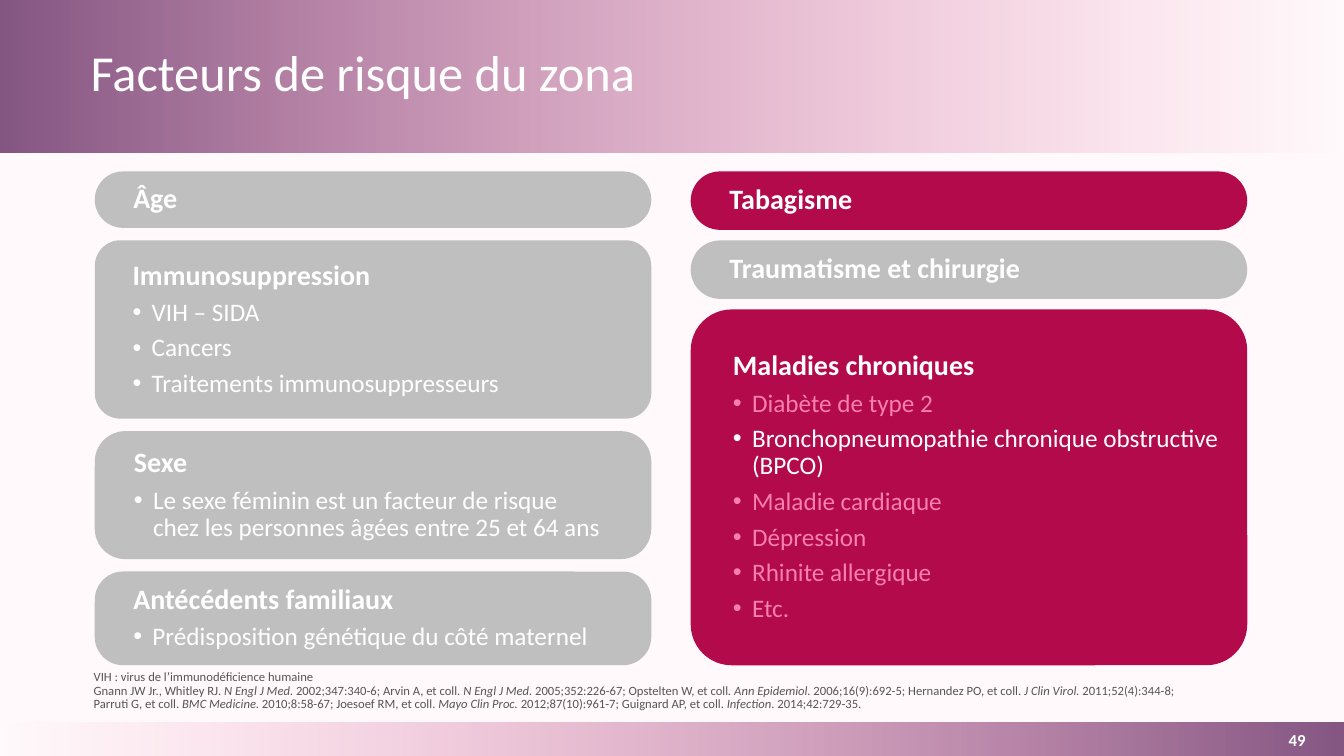
"""Build the slide on risk factors for shingles."""
from dataclasses import dataclass

from lxml import etree
from pptx import Presentation
from pptx import util as u
from pptx.dml.color import RGBColor
from pptx.enum import shapes, text
from pptx.oxml.ns import qn


@dataclass(frozen=True)
class Theme:
    """Colours, font and type sizes of the slide."""
    font: str = "Calibri"
    white: str = "FFFFFF"
    background: str = "FFF9FB"
    purple: str = "855683"
    pink: str = "F87FAE"
    crimson: str = "B20A4B"
    grey: str = "BFBFBF"
    note: str = "555555"
    title_size: int = 36
    heading_size: int = 20
    bullet_size: int = 18
    number_size: int = 12
    note_size: int = 9


@dataclass(frozen=True)
class Box:
    """A rectangle in percent of the slide's width and height."""
    left: float
    top: float
    width: float
    height: float

    def emu(self) -> tuple[int, int, int, int]:
        """Give left, top, width and height in slide units."""
        return (int(WIDTH * self.left / 100), int(HEIGHT * self.top / 100),
                int(WIDTH * self.width / 100), int(HEIGHT * self.height / 100))


@dataclass(frozen=True)
class Card:
    """A rounded card: height in percent of the slide, heading and bullets."""
    heading: str
    height: float
    corner: float = 0.5
    bullets: tuple[str, ...] = ()
    fill: str = Theme.grey
    faded: tuple[str, ...] = ()


THEME = Theme()
WIDTH, HEIGHT = u.Inches(13.33), u.Inches(7.5)
CARDS_TOP, CARDS_BOTTOM, CARD_WIDTH = 22.67, 88, 41.41
HEADER = Box(0, 0, 100, 20.13)
FOOTER = Box(0, 95.6, 100, 4.4)
TITLE = Box(6, 2.4, 86.05, 15.2)
NOTE = Box(6.23, 85.87, 84.1, 8.93)
NUMBER = Box(93.02, 95.6, 6.98, 4.4)

COLUMNS: dict[float, tuple[Card, ...]] = {
    7.05: (
        Card("Âge", 7.47),
        Card("Immunosuppression", 23.6, 0.144,
             ("VIH – SIDA", "Cancers", "Traitements immunosuppresseurs")),
        Card("Sexe", 16.93, 0.238,
             ("Le sexe féminin est un facteur de risque\n"
              "chez les personnes âgées entre 25 et 64 ans",)),
        Card("Antécédents familiaux", 12.4, 0.303,
             ("Prédisposition génétique du côté maternel",)),
    ),
    51.39: (
        Card("Tabagisme", 7.73, fill=THEME.crimson),
        Card("Traumatisme et chirurgie", 7.73),
        Card("Maladies chroniques", 47.07, 0.115,
             ("Diabète de type 2",
              "Bronchopneumopathie chronique obstructive (BPCO)",
              "Maladie cardiaque", "Dépression", "Rhinite allergique", "Etc."),
             THEME.crimson,
             ("Diabète de type 2", "Maladie cardiaque", "Dépression",
              "Rhinite allergique", "Etc.")),
    ),
}

ABBREVIATION = "VIH : virus de l’immunodéficience humaine"
REFERENCES = (
    "Gnann JW Jr., Whitley RJ. *N Engl J Med. *2002;347:340-6; Arvin A, et coll. "
    "*N Engl J Med. *2005;352:226-67; Opstelten W, et coll*. Ann Epidemiol.* "
    "2006;16(9):692-5; Hernandez PO, et coll. *J Clin Virol. *2011;52(4):344-8; "
    "Parruti G, et coll. *BMC Medicine.* 2010;8:58-67; Joesoef RM, et coll. "
    "*Mayo Clin Proc. *2012;87(10):961-7; Guignard AP, et coll. "
    "*Infection*. 2014;42:729-35."
)


def style(paragraph, size: int, color: str, bold: bool = False, spacing: float = 0.9) -> None:
    """Set the font and line spacing of a paragraph."""
    paragraph.line_spacing = spacing
    font = paragraph.font
    font.name, font.size, font.bold = THEME.font, u.Pt(size), bold
    font.color.rgb = RGBColor.from_string(color)


def add_bullet(paragraph) -> None:
    """Give a paragraph a hanging bullet."""
    properties = paragraph._p.get_or_add_pPr()
    properties.set("marL", str(u.Inches(0.19)))
    properties.set("indent", str(-u.Inches(0.19)))
    etree.SubElement(properties, qn("a:buFont"), typeface="Arial")
    etree.SubElement(properties, qn("a:buChar"), char="•")


def add_band(slide, box: Box, angle: int) -> None:
    """Draw a band fading from purple to clear pink."""
    band = slide.shapes.add_shape(shapes.MSO_SHAPE.RECTANGLE, *box.emu())
    band.shadow.inherit = False
    band.line.fill.background()
    band.fill.gradient()
    band.fill.gradient_angle = angle
    for stop, color in zip(band.fill.gradient_stops, (THEME.purple, THEME.pink)):
        stop.color.rgb = RGBColor.from_string(color)
    last_color = band._element.findall(".//" + qn("a:srgbClr"))[-1]
    etree.SubElement(last_color, qn("a:alpha"), val="0")


def add_card(slide, card: Card, left: float, top: float) -> None:
    """Draw a card with its heading and bullets."""
    shape = slide.shapes.add_shape(shapes.MSO_SHAPE.ROUNDED_RECTANGLE,
                                   *Box(left, top, CARD_WIDTH, card.height).emu())
    shape.adjustments[0] = card.corner
    shape.shadow.inherit = False
    shape.line.fill.background()
    shape.fill.solid()
    shape.fill.fore_color.rgb = RGBColor.from_string(card.fill)
    frame = shape.text_frame
    frame.word_wrap = True
    frame.vertical_anchor = text.MSO_ANCHOR.MIDDLE
    frame.margin_left, frame.margin_right = u.Inches(0.3), u.Inches(0.07)
    frame.margin_top = frame.margin_bottom = 0
    for index, line in enumerate((card.heading, *card.bullets)):
        paragraph = frame.add_paragraph() if index else frame.paragraphs[0]
        paragraph.text = line
        paragraph.alignment = text.PP_ALIGN.LEFT
        paragraph.space_after = u.Pt(6)
        if index:
            add_bullet(paragraph)
        style(paragraph, THEME.bullet_size if index else THEME.heading_size,
              THEME.pink if line in card.faded else THEME.white, bold=not index)


def add_column(slide, left: float, cards: tuple[Card, ...]) -> None:
    """Stack cards with equal gaps over the height of the card area."""
    free = CARDS_BOTTOM - CARDS_TOP - sum(card.height for card in cards)
    gap = free / (len(cards) - 1)
    top = CARDS_TOP
    for card in cards:
        add_card(slide, card, left, top)
        top += card.height + gap


def place_title(slide) -> None:
    """Move the title placeholder over the header and fill it."""
    title = slide.shapes.title
    title._element.getparent().append(title._element)
    title.left, title.top, title.width, title.height = TITLE.emu()
    title.text_frame.vertical_anchor = text.MSO_ANCHOR.MIDDLE
    paragraph = title.text_frame.paragraphs[0]
    paragraph.text = "Facteurs de risque du zona"
    paragraph.alignment = text.PP_ALIGN.LEFT
    style(paragraph, THEME.title_size, THEME.white)


def add_note(slide) -> None:
    """Write the abbreviation and the references, journals in italics."""
    frame = slide.shapes.add_textbox(*NOTE.emu()).text_frame
    frame.word_wrap = True
    frame.vertical_anchor = text.MSO_ANCHOR.BOTTOM
    frame.paragraphs[0].text = ABBREVIATION
    references = frame.add_paragraph()
    for index, part in enumerate(REFERENCES.split("*")):
        run = references.add_run()
        run.text = part
        run.font.italic = index % 2 == 1
    for paragraph in frame.paragraphs:
        style(paragraph, THEME.note_size, THEME.note)


def add_number(slide) -> None:
    """Write the slide number in the footer."""
    frame = slide.shapes.add_textbox(*NUMBER.emu()).text_frame
    frame.word_wrap = True
    frame.vertical_anchor = text.MSO_ANCHOR.MIDDLE
    frame.margin_left = frame.margin_right = frame.margin_top = frame.margin_bottom = 0
    paragraph = frame.paragraphs[0]
    paragraph.text = "49"
    paragraph.alignment = text.PP_ALIGN.CENTER
    style(paragraph, THEME.number_size, THEME.white, bold=True, spacing=1.0)


def main() -> None:
    """Build and save the presentation."""
    presentation = Presentation()
    presentation.slide_width, presentation.slide_height = WIDTH, HEIGHT
    slide = presentation.slides.add_slide(presentation.slide_layouts.get_by_name("Title Only"))
    slide.background.fill.solid()
    slide.background.fill.fore_color.rgb = RGBColor.from_string(THEME.background)
    add_band(slide, FOOTER, 180)
    add_band(slide, HEADER, 0)
    add_note(slide)
    place_title(slide)
    add_number(slide)
    for left, cards in COLUMNS.items():
        add_column(slide, left, cards)
    presentation.save("out.pptx")


if __name__ == "__main__":
    main()
